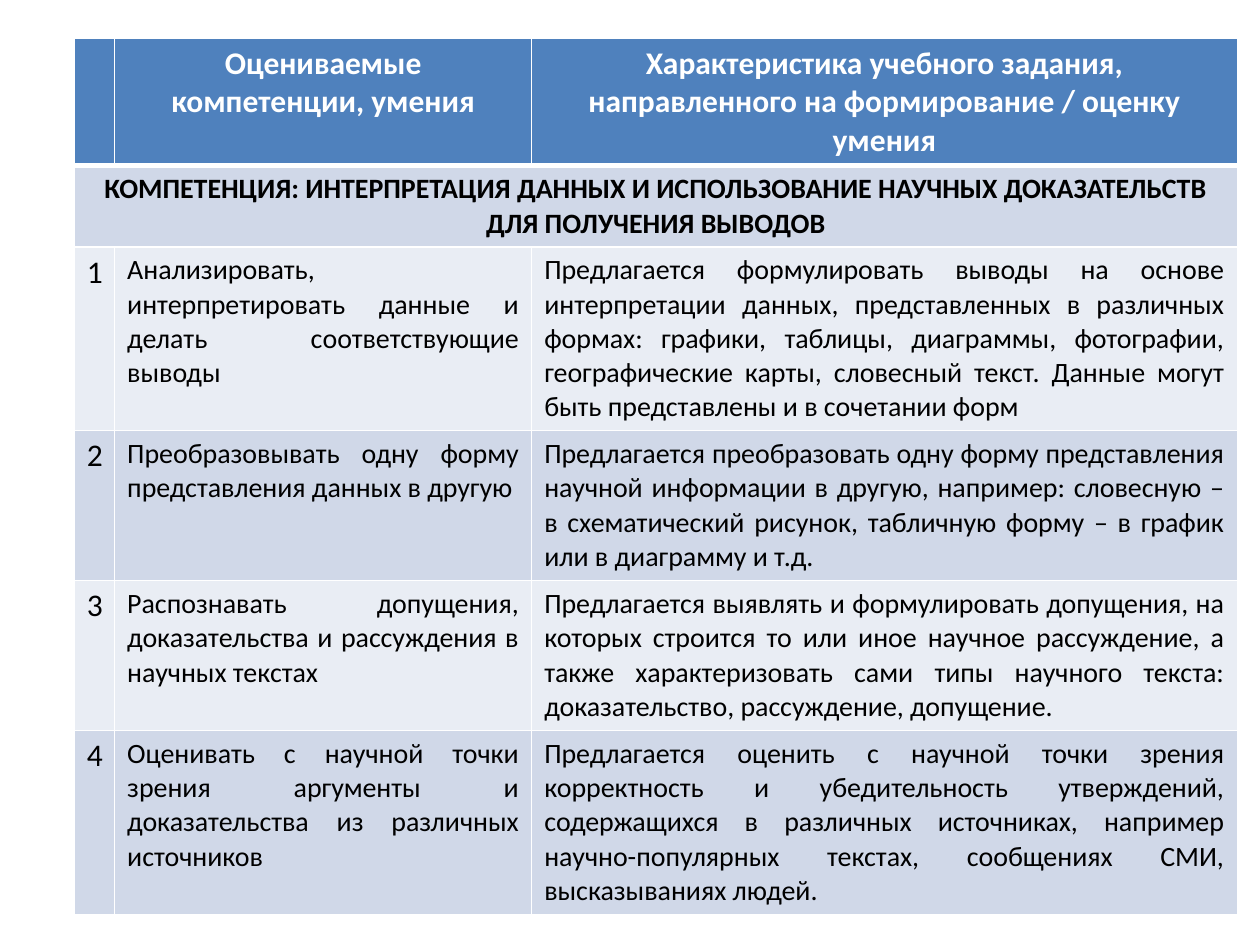
from lxml.etree import SubElement
from pptx import Presentation
from pptx.dml.color import RGBColor
from pptx.enum.text import PP_ALIGN as Align
from pptx.oxml.ns import qn
from pptx.util import Inches, Pt

WHITE, BLACK = "FFFFFF", "000000"
HEADER, DARK_BAND, LIGHT_BAND = "4F81BD", "D0D8E8", "E9EDF4"

COLUMN_WIDTHS = (0.32, 3.31, 5.6)
ROW_HEIGHTS = (1, 0.64, 1.45, 1.19, 1.19, 1.45)

HEADINGS = (
    "",
    "Оцениваемые компетенции, умения",
    "Характеристика учебного задания, направленного на формирование / оценку умения",
)
COMPETENCE = (
    "КОМПЕТЕНЦИЯ: ИНТЕРПРЕТАЦИЯ ДАННЫХ И ИСПОЛЬЗОВАНИЕ НАУЧНЫХ ДОКАЗАТЕЛЬСТВ "
    "ДЛЯ ПОЛУЧЕНИЯ ВЫВОДОВ"
)
SKILLS = (
    (
        "Анализировать, интерпретировать данные и делать соответствующие выводы",
        "Предлагается формулировать выводы на основе интерпретации данных, "
        "представленных в различных формах: графики, таблицы, диаграммы, фотографии, "
        "географические карты, словесный текст. Данные могут быть представлены и в "
        "сочетании форм",
    ),
    (
        "Преобразовывать одну форму представления данных в другую",
        "Предлагается преобразовать одну форму представления научной информации в "
        "другую, например: словесную – в схематический рисунок, табличную форму – "
        "в график или в диаграмму и т.д.",
    ),
    (
        "Распознавать допущения, доказательства и рассуждения в научных текстах",
        "Предлагается выявлять и формулировать допущения, на которых строится то или "
        "иное научное рассуждение, а также характеризовать сами типы научного текста: "
        "доказательство, рассуждение, допущение.",
    ),
    (
        "Оценивать с научной точки зрения аргументы и доказательства из различных "
        "источников",
        "Предлагается оценить с научной точки зрения корректность и убедительность "
        "утверждений, содержащихся в различных источниках, например научно-популярных "
        "текстах, сообщениях СМИ, высказываниях людей.",
    ),
)


def rgb(value):
    return RGBColor.from_string(value)


def set_borders(cell, bottom):
    """Draw white cell edges; the bottom one has its own width in points."""
    properties = cell._tc.get_or_add_tcPr()
    edges = {"a:lnL": 1, "a:lnR": 1, "a:lnT": 1, "a:lnB": bottom}
    for position, (edge, width) in enumerate(edges.items()):
        line = SubElement(properties, qn(edge), w=str(Pt(width)))
        fill = SubElement(line, qn("a:solidFill"))
        SubElement(fill, qn("a:srgbClr"), val=WHITE)
        properties.insert(position, line)


def fill_cell(cell, text, band, size, align, color=BLACK, bold=False, bottom=1):
    cell.fill.solid()
    cell.fill.fore_color.rgb = rgb(band)
    set_borders(cell, bottom)
    cell.text_frame.text = text
    paragraph = cell.text_frame.paragraphs[0]
    paragraph.alignment = align
    for styled in (paragraph, *paragraph.runs):
        styled.font.name = "Calibri"
        styled.font.size = Pt(size)
        styled.font.bold = bold
        styled.font.color.rgb = rgb(color)


def add_skills_table(slide, left, top):
    frame = slide.shapes.add_table(
        len(ROW_HEIGHTS), len(COLUMN_WIDTHS), Inches(left), Inches(top),
        Inches(sum(COLUMN_WIDTHS)), Inches(sum(ROW_HEIGHTS)))
    table = frame.table
    for column, width in zip(table.columns, COLUMN_WIDTHS):
        column.width = Inches(width)
    for row, height in zip(table.rows, ROW_HEIGHTS):
        row.height = Inches(height)

    for column, heading in enumerate(HEADINGS):
        fill_cell(table.cell(0, column), heading, HEADER, 18, Align.CENTER,
                  color=WHITE, bold=True, bottom=3)

    for column, text in enumerate((COMPETENCE, "", "")):
        fill_cell(table.cell(1, column), text, DARK_BAND, 16, Align.CENTER, bold=True)
    table.cell(1, 0).merge(table.cell(1, 2))

    for number, (skill, task) in enumerate(SKILLS, start=1):
        band = LIGHT_BAND if number % 2 else DARK_BAND
        row = number + 1
        fill_cell(table.cell(row, 0), str(number), band, 18, Align.LEFT)
        fill_cell(table.cell(row, 1), skill, band, 16, Align.JUSTIFY)
        fill_cell(table.cell(row, 2), task, band, 16, Align.JUSTIFY)


def main():
    deck = Presentation()
    deck.slide_width, deck.slide_height = Inches(10), Inches(7.5)
    slide = deck.slides.add_slide(deck.slide_layouts[6])
    add_skills_table(slide, left=0.59, top=0.3)
    deck.save("out.pptx")


if __name__ == "__main__":
    main()
